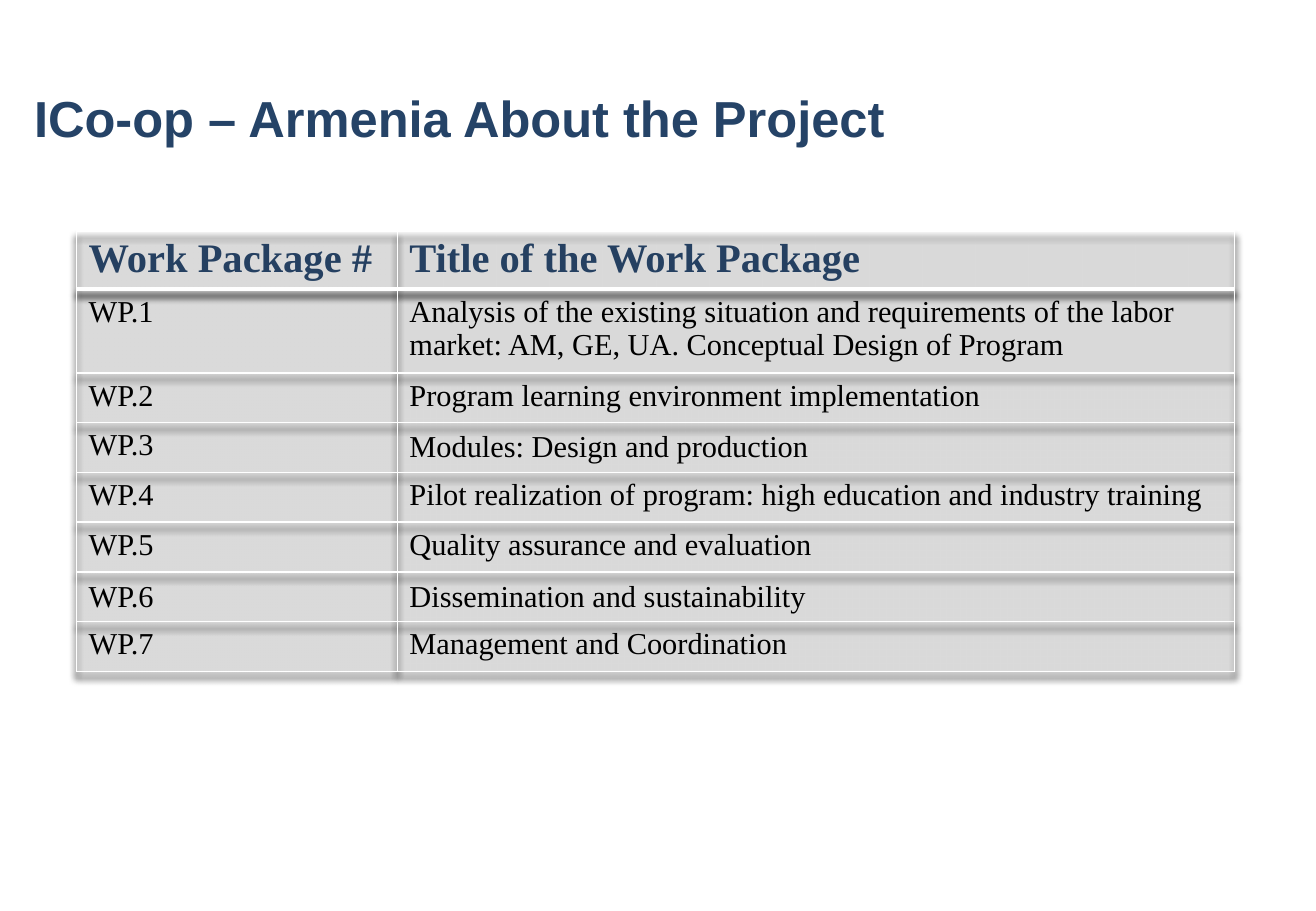
from pptx import Presentation, util as u
from pptx.dml.color import RGBColor
from pptx.enum import text
from pptx.oxml import parse_xml
from pptx.oxml.ns import nsdecls, qn
from lxml import etree

COLORS = {"title": "254367", "header": "254061", "body": "000000", "white": "FFFFFF"}
HEADINGS = ("Work Package #", "Title of the Work Package")
PACKAGES = [
    "Analysis of the existing situation and requirements of the labor market: "
    "AM, GE, UA. Conceptual Design of Program",
    "Program learning environment implementation",
    "Modules: Design and production",
    "Pilot realization of program: high education and industry training",
    "Quality assurance and evaluation",
    "Dissemination and sustainability",
    "Management and Coordination",
]
COLUMN_WIDTHS = (2.64, 6.89)
ROW_HEIGHTS = [0.48, 0.69] + [0.41] * 6
MIDDLE_CELLS = {(3, 1), (6, 0), (6, 1)}
INDENTED_CELLS = {(3, 1), (6, 1)}


class ProjectSlide:
    """Holds the slide and its style, and adds the title and the table."""

    def __init__(self, presentation):
        self.slide = presentation.slides.add_slide(presentation.slide_layouts[5])

    def style(self, paragraph, font_name, size, color, bold):
        paragraph.alignment = text.PP_ALIGN.LEFT
        for run in paragraph.runs:
            run.font.name = font_name
            run.font.size = u.Pt(size)
            run.font.bold = bold
            run.font.color.rgb = RGBColor.from_string(COLORS[color])

    def title(self, wording, left, top, width, height):
        heading = self.slide.shapes.title
        heading.left, heading.top = u.Inches(left), u.Inches(top)
        heading.width, heading.height = u.Inches(width), u.Inches(height)
        frame = heading.text_frame
        frame.text = wording
        frame.word_wrap = True
        frame.vertical_anchor = text.MSO_ANCHOR.MIDDLE
        self.style(frame.paragraphs[0], "Arial", 30, "title", True)

    def borders(self, cell, bottom, top):
        properties = cell._tc.get_or_add_tcPr()
        widths = {"lnL": 1, "lnR": 1, "lnT": top, "lnB": bottom}
        for index, (side, points) in enumerate(widths.items()):
            properties.insert(index, parse_xml(
                f'<a:{side} {nsdecls("a")} w="{u.Pt(points)}"><a:solidFill>'
                f'<a:srgbClr val="{COLORS["white"]}"/></a:solidFill></a:{side}>'))

    def cell(self, cell, wording, row, column):
        cell.text = wording
        cell.fill.solid()
        cell.fill.fore_color.rgb = RGBColor.from_string(COLORS["white"])
        fill_color = cell._tc.tcPr.find(f"{qn('a:solidFill')}/{qn('a:srgbClr')}")
        etree.SubElement(fill_color, qn("a:alpha"), val="18000")
        self.borders(cell, 3 if row == 0 else 1, 3 if row == 1 else 1)
        paragraph = cell.text_frame.paragraphs[0]
        if (row, column) in MIDDLE_CELLS:
            cell.vertical_anchor = text.MSO_ANCHOR.MIDDLE
        if (row, column) in INDENTED_CELLS:
            cell.margin_left = cell.margin_right = 0
            cell.margin_top = cell.margin_bottom = 0
            paragraph._p.get_or_add_pPr().set("marL", str(u.Inches(0.1)))
        if row == 0:
            self.style(paragraph, "Times New Roman", 24, "header", True)
        else:
            self.style(paragraph, "Times New Roman", 18, "body", False)

    def table(self, rows, left, top):
        table = self.slide.shapes.add_table(
            len(rows), len(COLUMN_WIDTHS), u.Inches(left), u.Inches(top),
            u.Inches(sum(COLUMN_WIDTHS)), u.Inches(sum(ROW_HEIGHTS))).table
        table.first_row = table.horz_banding = False
        table._tbl.tblPr.insert(0, parse_xml(
            f'<a:effectLst {nsdecls("a")}><a:outerShdw blurRad="{u.Pt(4)}" '
            f'dist="{u.Pt(4)}" dir="5400000" algn="t" rotWithShape="0">'
            '<a:srgbClr val="000000"/></a:outerShdw></a:effectLst>'))
        for column, width in zip(table.columns, COLUMN_WIDTHS):
            column.width = u.Inches(width)
        for row, height in zip(table.rows, ROW_HEIGHTS):
            row.height = u.Inches(height)
        for row, wordings in enumerate(rows):
            for column, wording in enumerate(wordings):
                self.cell(table.cell(row, column), wording, row, column)


def main():
    presentation = Presentation()
    presentation.slide_width = u.Inches(10.83)
    presentation.slide_height = u.Inches(7.5)
    project = ProjectSlide(presentation)
    project.title("ICo-op – Armenia About the Project", 0.18, 0.29, 9.09, 1.35)
    packages = [(f"WP.{number}", name) for number, name in enumerate(PACKAGES, 1)]
    project.table([HEADINGS] + packages, 0.63, 1.9)
    presentation.save("out.pptx")


if __name__ == "__main__":
    main()
